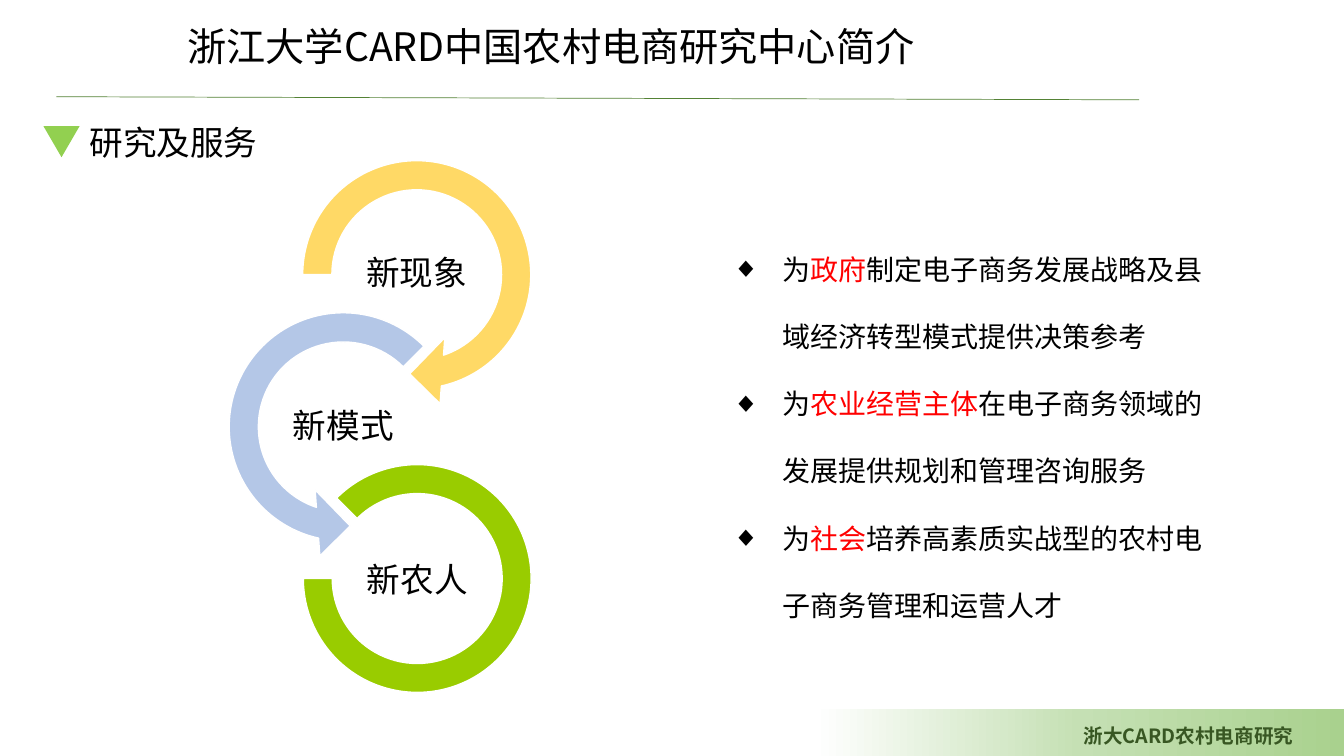
"""Build the slide on the research and services of the rural e-commerce centre."""
from copy import deepcopy

from lxml.etree import SubElement
from pptx import Presentation
from pptx.dml.color import RGBColor
from pptx.enum.shapes import MSO_CONNECTOR, MSO_SHAPE
from pptx.enum.text import MSO_ANCHOR, MSO_AUTO_SIZE, PP_ALIGN
from pptx.oxml.ns import qn
from pptx.util import Pt

FONT = "Noto Sans CJK SC"
COLORS = {
    "text": "000000", "highlight": "FF0000", "white": "FFFFFF",
    "footer": "385723", "rule": "548235", "marker": "92D050",
    "band": "A9D18E", "band_middle": "C5E0B4",
    "yellow": "FFD966", "blue": "B4C7E7", "green": "99CC00",
}


def color(name):
    """Return the named colour."""
    return RGBColor.from_string(COLORS[name])


def write(shape, box, text, size, align=PP_ALIGN.LEFT, color_name="text", bold=False):
    """Place a shape and give it one vertically centred line of text."""
    shape.left, shape.top, shape.width, shape.height = [Pt(value) for value in box]
    frame = shape.text_frame
    frame.word_wrap = True
    frame.auto_size = MSO_AUTO_SIZE.NONE
    frame.vertical_anchor = MSO_ANCHOR.MIDDLE
    paragraph = frame.paragraphs[0]
    paragraph.text = text
    paragraph.alignment = align
    font = paragraph.font
    font.size, font.bold, font.name = Pt(size), bold, FONT
    font.color.rgb = color(color_name)
    SubElement(paragraph._p.pPr.find(qn("a:defRPr")), qn("a:ea"), typeface=FONT)
    return paragraph


presentation = Presentation()
presentation.slide_width, presentation.slide_height = Pt(960), Pt(540)
slide = presentation.slides.add_slide(presentation.slide_layouts[1])
shapes = slide.shapes

band = shapes.add_shape(MSO_SHAPE.RECTANGLE, Pt(581.6), Pt(506.2), Pt(378.4), Pt(33.8))
band.shadow.inherit = False
band.line.fill.background()
band.fill.gradient()
band.fill.gradient_angle = 180
stop_list = next(band._element.spPr.iter(qn("a:gsLst")))
stop_list.append(deepcopy(stop_list[0]))
band_stops = [(0, "band"), (0.5, "band_middle"), (1, "white")]
for stop, (position, name) in zip(band.fill.gradient_stops, band_stops):
    stop.position = position
    stop.color.rgb = color(name)

footer = shapes.add_textbox(0, 0, 0, 0)
write(footer, (766.8, 513.4, 193.2, 24.2), "浙大CARD农村电商研究", 14,
      PP_ALIGN.JUSTIFY, "footer", True)

rule = shapes.add_connector(MSO_CONNECTOR.STRAIGHT, Pt(40.3), Pt(69.1), Pt(813.6), Pt(71.3))
rule.line.color.rgb = color("rule")
rule.line.width = Pt(0.5)
SubElement(rule._element.spPr, qn("a:effectLst"))

write(shapes.title, (126.7, 12.2, 637.2, 41), "浙江大学CARD中国农村电商研究中心简介", 28,
      PP_ALIGN.JUSTIFY)
heading = shapes.add_textbox(0, 0, 0, 0)
write(heading, (56.9, 83.5, 280, 36), "研究及服务", 24)

marker = shapes.add_shape(MSO_SHAPE.ISOSCELES_TRIANGLE, Pt(31), Pt(90), Pt(25.9), Pt(22.3))
marker.rotation = 180
marker.shadow.inherit = False
marker.fill.solid()
marker.fill.fore_color.rgb = color("marker")
marker.line.fill.background()

services = [
    ("政府", "制定电子商务发展战略及县域经济转型模式提供决策参考"),
    ("农业经营主体", "在电子商务领域的发展提供规划和管理咨询服务"),
    ("社会", "培养高素质实战型的农村电子商务管理和运营人才"),
]
body = slide.placeholders[1]
body.left, body.top, body.width, body.height = Pt(515.5), Pt(152.6), Pt(370), Pt(298)
frame = body.text_frame
frame.auto_size = MSO_AUTO_SIZE.NONE
frame.vertical_anchor = MSO_ANCHOR.TOP
for index, (audience, service) in enumerate(services):
    paragraph = frame.add_paragraph() if index else frame.paragraphs[0]
    paragraph.line_spacing = Pt(48)
    paragraph.space_before = Pt(0)
    properties = paragraph._p.get_or_add_pPr()
    properties.set("marL", str(Pt(36)))
    properties.set("indent", str(Pt(-36)))
    SubElement(properties, qn("a:buChar"), char="◆")
    paragraph.font.size, paragraph.font.name = Pt(20), FONT
    paragraph.font.color.rgb = color("text")
    SubElement(properties.find(qn("a:defRPr")), qn("a:ea"), typeface=FONT)
    for text in ("为", audience, service):
        run = paragraph.add_run()
        run.text = text
        if text == audience:
            run.font.color.rgb = color("highlight")

rings = [
    ("新现象", MSO_SHAPE.CIRCULAR_ARROW, 203, 101.5, 189.4, "yellow",
     (0.11, 11.42, 45, 108, 0.125)),
    ("新模式", MSO_SHAPE.LEFT_CIRCULAR_ARROW, 150.5, 210.2, 189.4, "blue",
     (0.11, 11.42, 63, 189, 0.125)),
    ("新农人", MSO_SHAPE.BLOCK_ARC, 216.7, 331.9, 162.7, "green", (135, 108, 0.127)),
]
for index, (name, kind, left, top, size, fill, adjustments) in enumerate(rings):
    ring = shapes.add_shape(kind, Pt(left), Pt(top), Pt(size), Pt(size))
    ring.shadow.inherit = False
    for position, value in enumerate(adjustments):
        ring.adjustments[position] = value
    ring.fill.solid()
    ring.fill.fore_color.rgb = color(fill)
    ring.line.color.rgb = color("white")
    ring.line.width = Pt(1)

    label = shapes.add_textbox(0, 0, 0, 0)
    box = (left + size / 2 - 52.6, 169.9 + 109.45 * index, 105.2, 52.6)
    write(label, box, name, 24, PP_ALIGN.CENTER).line_spacing = 0.9
    label_frame = label.text_frame
    label_frame.margin_left = label_frame.margin_right = Pt(1.4)
    label_frame.margin_top = label_frame.margin_bottom = Pt(1.4)

presentation.save("out.pptx")
